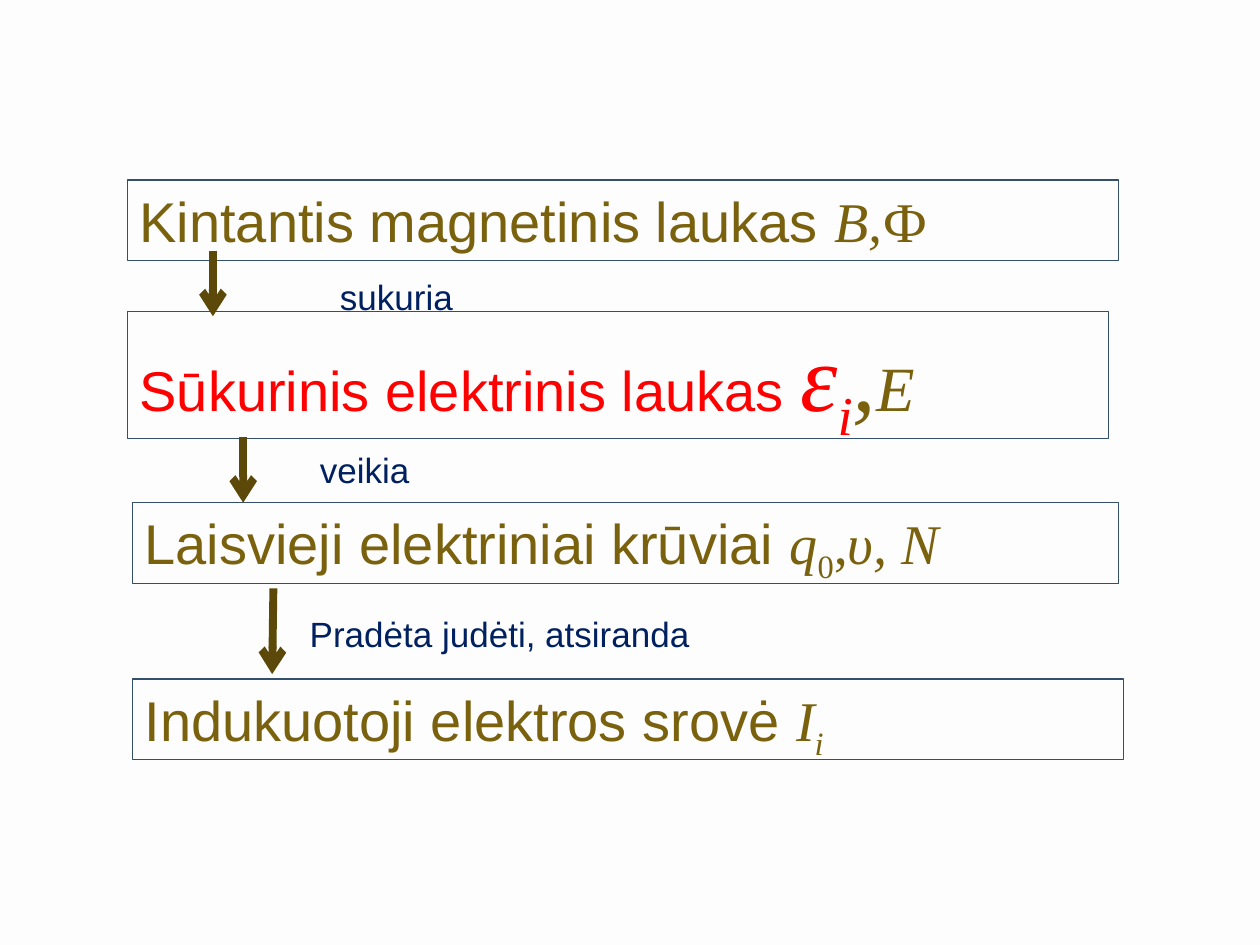
from lxml import etree
from pptx import Presentation
from pptx import util as u
from pptx.dml.color import RGBColor
from pptx.enum import shapes, text
from pptx.oxml.ns import qn

PAPER = RGBColor(0xFD, 0xFD, 0xFD)
FRAME = RGBColor(0x34, 0x4E, 0x6D)
OLIVE = RGBColor(0x7A, 0x61, 0x0D)
RED = RGBColor(0xFF, 0x00, 0x00)
NAVY = RGBColor(0x00, 0x20, 0x60)
BROWN = RGBColor(0x5C, 0x49, 0x0A)
SANS, SERIF = "Arial", "Times New Roman"


class CauseChain:
    """Style and slide for a chain of causes and effects."""

    def __init__(self, slide):
        self.slide = slide
        slide.background.fill.solid()
        slide.background.fill.fore_color.rgb = PAPER

    def add_words(self, shape, pieces):
        frame = shape.text_frame
        frame.word_wrap = True
        frame.vertical_anchor = text.MSO_ANCHOR.TOP
        line = frame.paragraphs[0]
        line.alignment = text.PP_ALIGN.LEFT
        for words, size, name, color, italic, subscript in pieces:
            run = line.add_run()
            run.text = words
            font = run.font
            font.size, font.name, font.italic = u.Pt(size), name, italic
            font.color.rgb = color
            if subscript:
                font._element.set("baseline", "-25000")

    def step(self, left, top, width, height, title, symbols, color=OLIVE):
        box = self.slide.shapes.add_shape(
            shapes.MSO_SHAPE.RECTANGLE,
            *map(u.Inches, (left, top, width, height)))
        box.shadow.inherit = False
        box.fill.background()
        box.line.color.rgb = FRAME
        box.line.width = u.Pt(0.75)
        self.add_words(box, [(title, 32, SANS, color, False, False)] + symbols)

    def link(self, left, top, width, height, label, extra=()):
        box = self.slide.shapes.add_textbox(
            *map(u.Inches, (left, top, width, height)))
        self.add_words(box, [(label, 20, SANS, NAVY, False, False), *extra])

    def arrow(self, x, top, end_x, bottom):
        arrow = self.slide.shapes.add_connector(
            shapes.MSO_CONNECTOR.STRAIGHT,
            *map(u.Inches, (x, top, end_x, bottom)))
        arrow.line.color.rgb = BROWN
        arrow.line.width = u.Pt(4.5)
        outline = arrow._element.spPr.find(qn("a:ln"))
        etree.SubElement(outline, qn("a:tailEnd"), type="arrow")
        etree.SubElement(arrow._element.spPr, qn("a:effectLst"))


def symbol(words, italic=True, subscript=False, size=32, color=OLIVE):
    return words, size, SERIF, color, italic, subscript


def main():
    deck = Presentation()
    deck.slide_width, deck.slide_height = u.Inches(10), u.Inches(7.5)
    chain = CauseChain(deck.slides.add_slide(deck.slide_layouts[6]))

    # Steps, each with its physical quantities
    chain.step(1.01, 1.43, 7.87, 0.64, "Kintantis magnetinis laukas ",
               [symbol("B,"), symbol("Ф", italic=False)])
    chain.step(1.01, 2.47, 7.79, 1.01, "Sūkurinis elektrinis laukas ",
               [symbol("ε", size=54, color=RED),
                symbol("i", subscript=True, size=54, color=RED),
                symbol(",", size=54), symbol("E", size=36)], RED)
    chain.step(1.05, 3.99, 7.83, 0.64, "Laisvieji elektriniai krūviai ",
               [symbol("q"), symbol("0", italic=False, subscript=True),
                symbol(",", italic=False), symbol("υ, N")])
    chain.step(1.05, 5.39, 7.87, 0.64, "Indukuotoji elektros srovė ",
               [symbol("I"), symbol("i", subscript=True)])

    # Labels between the steps
    chain.link(2.6, 2.03, 4.43, 0.57, "sukuria",
               [(" ", 28, "Cambria", OLIVE, False, False)])
    chain.link(2.44, 3.51, 3.59, 0.44, "veikia")
    chain.link(2.36, 4.81, 6.03, 0.44, "Pradėta judėti, atsiranda")

    # Arrows from step to step
    chain.arrow(1.69, 1.99, 1.69, 2.51)
    chain.arrow(1.93, 3.47, 1.93, 3.99)
    chain.arrow(2.17, 4.67, 2.16, 5.35)

    deck.save("out.pptx")


if __name__ == "__main__":
    main()
